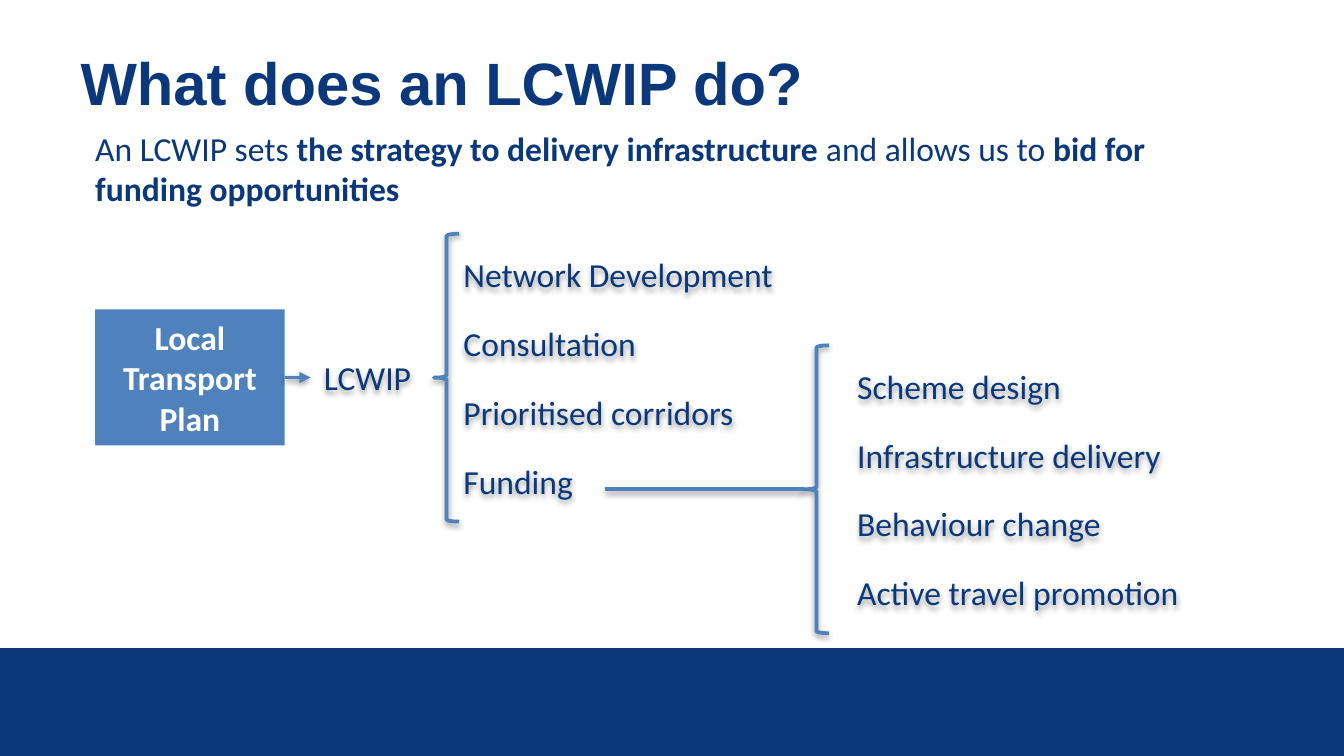
from dataclasses import dataclass

import pptx
import pptx.dml.color
import pptx.enum.shapes
import pptx.enum.text
import pptx.oxml
import pptx.oxml.ns
import pptx.util

Cm = pptx.util.Cm
Pt = pptx.util.Pt
MSO_SHAPE = pptx.enum.shapes.MSO_SHAPE
MSO_ANCHOR = pptx.enum.text.MSO_ANCHOR
PP_ALIGN = pptx.enum.text.PP_ALIGN


@dataclass(frozen=True)
class Theme:
    navy: str = "0A387A"
    blue: str = "4F81BD"
    white: str = "FFFFFF"
    title_font: str = "Arial"
    body_font: str = "Calibri"
    title_size: int = 32
    body_size: int = 18
    line_width: int = 2


THEME = Theme()
SLIDE_W, SLIDE_H = 25.4, 14.29
LABEL_H = 1.02
ITEM_PITCH = 1.3
BRACE_W = 0.48


def rgb(value):
    return pptx.dml.color.RGBColor.from_string(value)


def cm_box(box):
    return [Cm(v) for v in box]


def format_run(r, font=THEME.body_font, size=THEME.body_size, color=THEME.navy, bold=False):
    r.font.name = font
    r.font.size = Pt(size)
    r.font.color.rgb = rgb(color)
    r.font.bold = bold


def add_shadow(sp):
    """Give a shape or connector a soft shadow straight below it."""
    sp._element.spPr.append(pptx.oxml.parse_xml(
        f'<a:effectLst {pptx.oxml.ns.nsdecls("a")}>'
        '<a:outerShdw blurRad="40000" dist="20000" dir="5400000" rotWithShape="0">'
        '<a:srgbClr val="000000"><a:alpha val="38000"/></a:srgbClr>'
        '</a:outerShdw></a:effectLst>'))


def style_line(sp):
    sp.line.color.rgb = rgb(THEME.blue)
    sp.line.width = Pt(THEME.line_width)
    add_shadow(sp)


def add_rect(slide, box, color):
    sp = slide.shapes.add_shape(MSO_SHAPE.RECTANGLE, *cm_box(box))
    sp.shadow.inherit = False
    sp.fill.solid()
    sp.fill.fore_color.rgb = rgb(color)
    sp.line.fill.background()
    return sp


def add_label(slide, box, text):
    sp = slide.shapes.add_textbox(*cm_box(box))
    tf = sp.text_frame
    tf.word_wrap = True
    tf.text = text
    format_run(tf.paragraphs[0].runs[0])
    add_shadow(sp)
    return sp


def add_line(slide, x1, y1, x2, y2):
    return slide.shapes.add_connector(
        pptx.enum.shapes.MSO_CONNECTOR.STRAIGHT, Cm(x1), Cm(y1), Cm(x2), Cm(y2))


def add_title(slide, box, text):
    sp = slide.shapes.title
    sp.left, sp.top, sp.width, sp.height = cm_box(box)
    tf = sp.text_frame
    tf.text = text
    tf.word_wrap = True
    tf.vertical_anchor = MSO_ANCHOR.TOP
    tf.margin_top = Cm(0.25)
    p = tf.paragraphs[0]
    p.alignment = PP_ALIGN.LEFT
    format_run(p.runs[0], THEME.title_font, THEME.title_size, bold=True)


def add_intro(slide, box, parts):
    """Add one paragraph from (text, bold) parts."""
    tf = slide.shapes.add_textbox(*cm_box(box)).text_frame
    tf.word_wrap = True
    for text, bold in parts:
        r = tf.paragraphs[0].add_run()
        r.text = text
        format_run(r, bold=bold)


def add_source(slide, box, plan_w, label_x):
    """Place the plan box and the arrow that leads to the LCWIP label."""
    x, y, w, h = box
    plan = add_rect(slide, (x, y, plan_w, h), THEME.blue)
    tf = plan.text_frame
    tf.word_wrap = True
    tf.vertical_anchor = MSO_ANCHOR.MIDDLE
    tf.text = "Local Transport Plan"
    p = tf.paragraphs[0]
    p.alignment = PP_ALIGN.CENTER
    format_run(p.runs[0], color=THEME.white, bold=True)

    middle = y + h / 2
    label = add_label(
        slide, (x + label_x, middle - LABEL_H / 2, w - label_x, LABEL_H), "LCWIP")
    arrow = add_line(slide, x + plan_w, middle, x + label_x, middle)
    arrow.begin_connect(plan, 3)
    arrow.end_connect(label, 1)
    style_line(arrow)
    arrow.line._get_or_add_ln().append(pptx.oxml.parse_xml(
        f'<a:tailEnd {pptx.oxml.ns.nsdecls("a")} type="triangle"/>'))


def add_branch(slide, box, indent, items):
    """Place a brace with its items evenly spaced and centred beside it."""
    x, y, w, h = box
    brace = slide.shapes.add_shape(MSO_SHAPE.LEFT_BRACE, *cm_box((x, y, BRACE_W, h)))
    brace.fill.background()
    style_line(brace)
    first = y + (h - ITEM_PITCH * (len(items) - 1) - LABEL_H) / 2
    for i, text in enumerate(items):
        add_label(slide, (x + indent, first + i * ITEM_PITCH, w - indent, LABEL_H), text)
    return brace


def add_funding_link(slide, box, brace):
    x, y, w, h = box
    link = add_line(slide, x, y, x + w, y + h)
    link.end_connect(brace, 1)
    style_line(link)


def main():
    prs = pptx.Presentation()
    prs.slide_width, prs.slide_height = Cm(SLIDE_W), Cm(SLIDE_H)
    slide = prs.slides.add_slide(prs.slide_layouts.get_by_name("Title Only"))

    band_h = 2.04
    add_rect(slide, (0, SLIDE_H - band_h, SLIDE_W, band_h), THEME.navy)
    add_title(slide, (1.27, 0.61, 18.47, 4.14), "What does an LCWIP do?")
    add_intro(slide, (1.55, 2.29, 22.3, 1.8), [
        ("An LCWIP sets ", False),
        ("the strategy to delivery infrastructure ", True),
        ("and allows us to ", False),
        ("bid for funding opportunities", True),
    ])
    add_source(slide, (1.8, 5.85, 7.65, 2.57), plan_w=3.58, label_x=4.07)
    add_branch(slide, (8.2, 4.42, 6.76, 5.44), 0.31, [
        "Network Development", "Consultation", "Prioritised corridors", "Funding"])
    brace = add_branch(slide, (15.19, 6.53, 7.77, 5.44), 0.76, [
        "Scheme design", "Infrastructure delivery", "Behaviour change",
        "Active travel promotion"])
    add_funding_link(slide, (11.43, 9.25, 3.76, 0), brace)
    prs.save("out.pptx")


if __name__ == "__main__":
    main()
